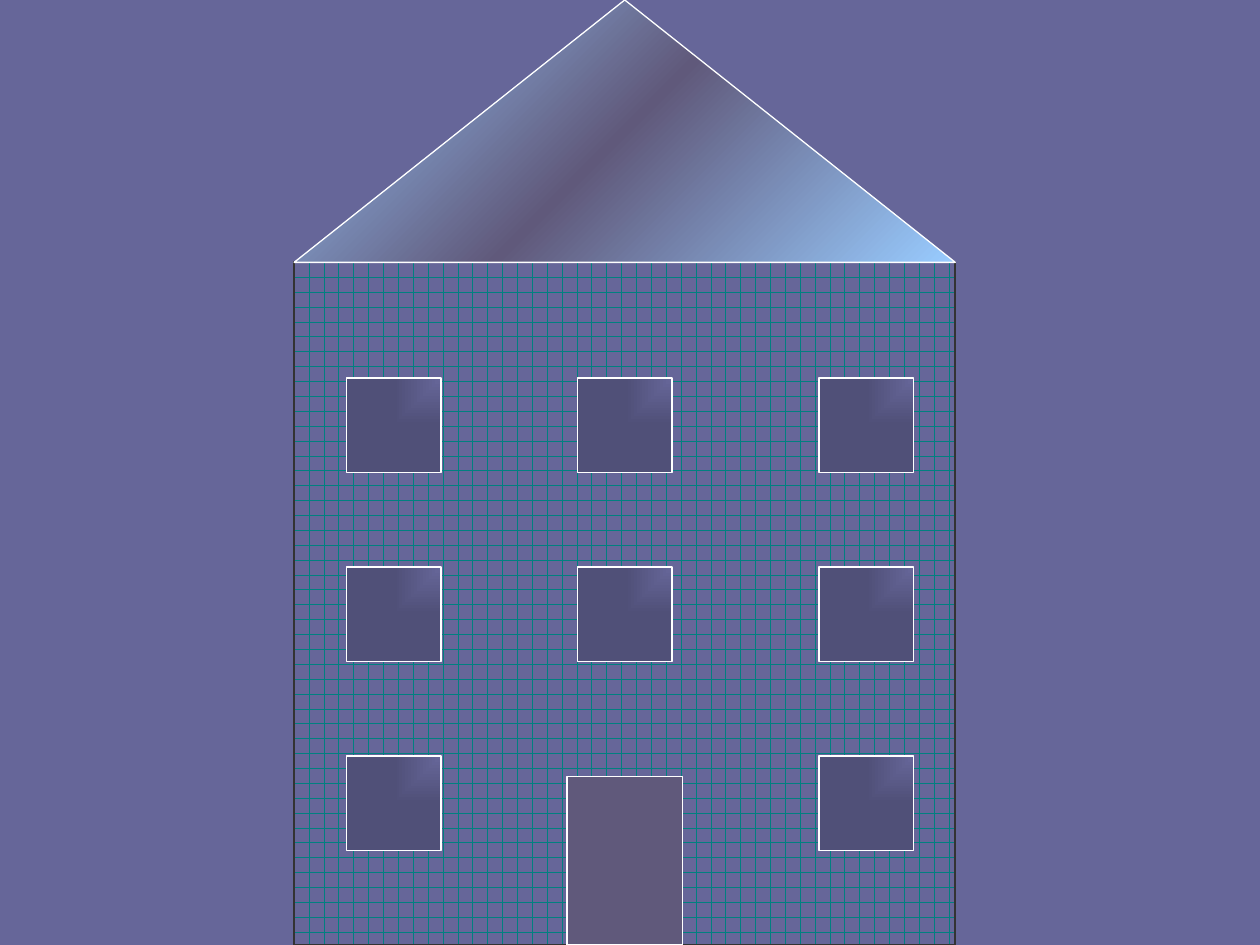
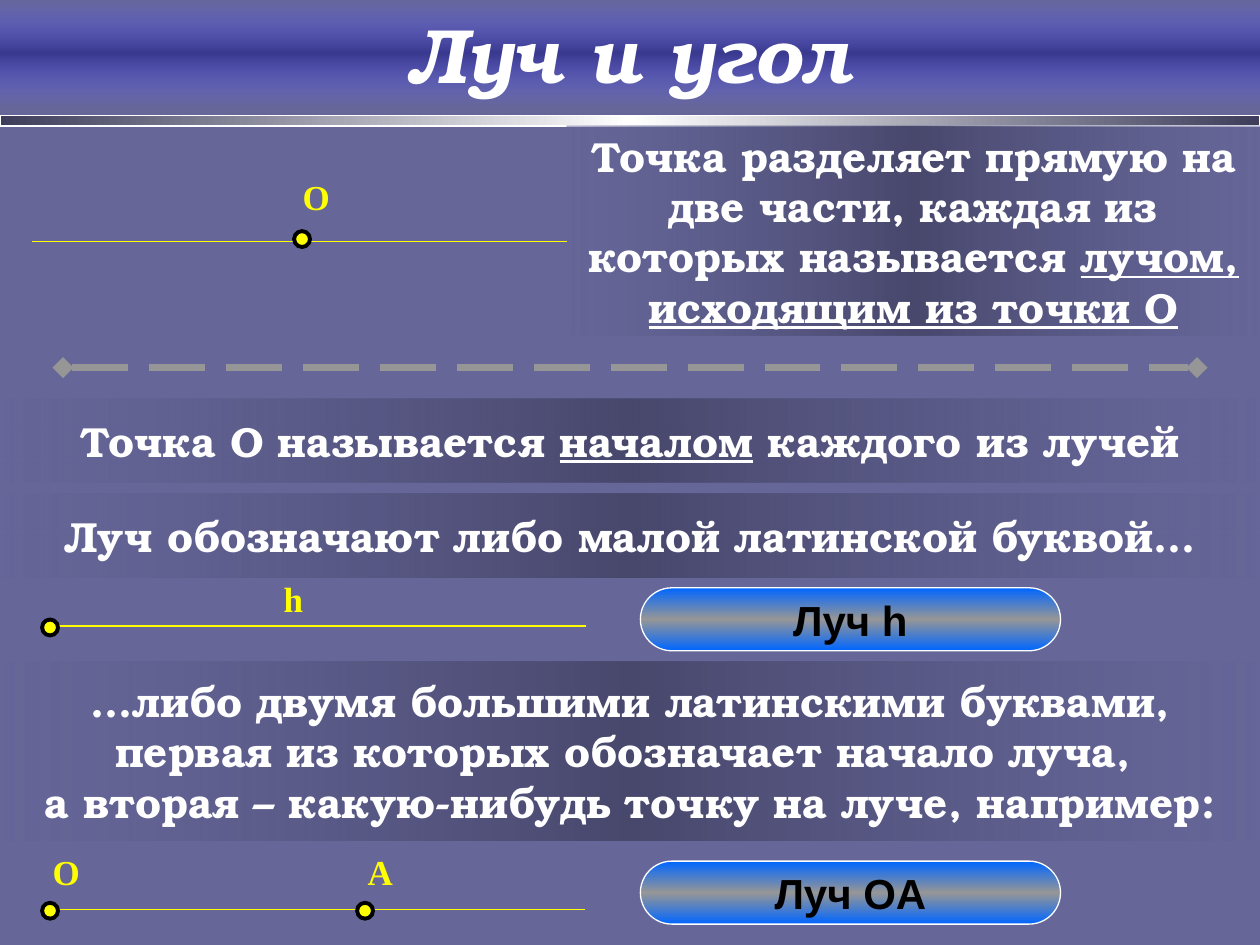
"""Build a house slide and a lesson slide about rays and angles."""
from dataclasses import dataclass
from typing import Any, Optional

from lxml.etree import SubElement as Sub
from pptx import Presentation
from pptx.dml.color import RGBColor as Rgb
from pptx.enum.dml import MSO_LINE_DASH_STYLE as Dash, MSO_PATTERN_TYPE as Pat
from pptx.enum.shapes import MSO_CONNECTOR_TYPE as Link, MSO_SHAPE as Kind
from pptx.enum.text import MSO_ANCHOR as Anchor, MSO_AUTO_SIZE as Auto, PP_ALIGN as Align
from pptx.oxml.ns import qn
from pptx.util import Cm, Pt


@dataclass(frozen=True)
class Stop:
    place: int
    color: str
    shade: Optional[float] = None
    alpha: Optional[int] = None


@dataclass(frozen=True)
class Blend:
    stops: tuple[Stop, ...]
    angle: Optional[int] = 0


@dataclass(frozen=True)
class Style:
    color: str
    font: dict[str, Any]


@dataclass(frozen=True)
class Theme:
    base: str = "666699"
    white: str = "FFFFFF"
    black: str = "000000"
    yellow: str = "FFFF00"
    grey: str = "969696"
    brick: str = "008080"
    edge: str = "333333"
    door: str = "60597B"
    thin: float = 0.75
    title: Style = Style("FFFFFF", dict(name="TeX Gyre Bonum", size=Pt(44), bold=True, italic=True))
    body: Style = Style("FFFFFF", dict(name="TeX Gyre Bonum", size=Pt(24), bold=True))
    button: Style = Style("000000", dict(name="Arial", size=Pt(24), bold=True))
    mark: Style = Style("FFFF00", dict(name="Times New Roman", size=Pt(20), bold=True))
    glass: Blend = Blend((Stop(0, "666699"), Stop(100, "666699", 57.65)), None)
    roof: Blend = Blend((Stop(0, "99CCFF"), Stop(50, "60597B"), Stop(100, "99CCFF")), 45)
    head: Blend = Blend((Stop(0, "6666FF", alpha=0), Stop(50, "6666FF", 26.67),
                         Stop(100, "6666FF", alpha=0)), 90)
    rule: Blend = Blend((Stop(0, "3E3E5C"), Stop(50, "FFFFFF"), Stop(100, "3E3E5C")))
    band: Blend = Blend((Stop(0, "666699", alpha=50), Stop(50, "666699", 46.27),
                         Stop(100, "666699", alpha=50)))
    pill: Blend = Blend((Stop(0, "0066FF"), Stop(50, "969696"), Stop(100, "0066FF")), 90)


@dataclass(frozen=True)
class Box:
    left: float
    top: float
    width: float
    height: float

    def cm(self) -> tuple[Cm, ...]:
        """Give the four lengths."""
        return Cm(self.left), Cm(self.top), Cm(self.width), Cm(self.height)


@dataclass(frozen=True)
class Mark:
    text: str
    left: float


@dataclass(frozen=True)
class Ray:
    left: float
    level: float
    dots: tuple[float, ...]
    dot_top: float
    marks: tuple[Mark, ...]
    mark_top: float


@dataclass(frozen=True)
class Label:
    box: Box
    text: str


THEME = Theme()
WIDE, TALL = 25.4, 19.05
WALL = Box(5.93, 5.29, 13.33, 13.76)
ROOF = Box(WALL.left, 0, WALL.width, WALL.top)
DOOR = Box(11.43, 15.66, 2.33, 3.39)
PANE, FLOOR, STEP = 1.91, 7.62, 3.81
COLUMNS = (6.98, 11.64, 16.51)
DOT, LENGTH = 0.32, 10.8

BANDS = (
    Label(Box(11.43, 2.54, 13.97, 4.23),
          "Точка разделяет прямую на две части, каждая из которых называется "
          "_лучом, исходящим из точки O_"),
    Label(Box(0, 8.04, WIDE, 1.69), "Точка O называется _началом_ каждого из лучей"),
    Label(Box(0, 9.95, WIDE, 1.69), "Луч обозначают либо малой латинской буквой…"),
    Label(Box(0, 13.34, WIDE, 3.6),
          "…либо двумя большими латинскими буквами, первая из которых обозначает начало луча, \n"
          "а вторая – какую-нибудь точку на луче, например:"),
)
BUTTONS = (Label(Box(12.91, 11.85, 8.47, 1.27), "Луч h"),
           Label(Box(12.91, 17.36, 8.47, 1.27), "Луч OA"))
RAYS = (
    Ray(0.64, 4.87, (5.93,), 4.66, (Mark("O", 6.1),), 3.53),
    Ray(1.02, 12.62, (0.85,), 12.49, (Mark("h", 5.72),), 11.64),
    Ray(0.99, 18.34, (0.85, 7.2), 18.2, (Mark("O", 1.06), Mark("А", 7.41)), 17.15),
)


def blend(shape: Any, mix: Blend) -> None:
    """Fill a shape with a gradient."""
    shape.fill.gradient()
    grad = shape.element.spPr.find(qn("a:gradFill"))
    for child in list(grad):
        grad.remove(child)
    stops = Sub(grad, qn("a:gsLst"))
    for stop in mix.stops:
        node = Sub(stops, qn("a:gs"), pos=str(stop.place * 1000))
        color = Sub(node, qn("a:srgbClr"), val=stop.color)
        for tag, value in (("a:shade", stop.shade), ("a:alpha", stop.alpha)):
            if value is not None:
                Sub(color, qn(tag), val=str(round(value * 1000)))
    if mix.angle is None:
        rect = Sub(grad, qn("a:path"), {"path": "rect"})
        Sub(rect, qn("a:fillToRect"), l="100000", b="100000")
    else:
        Sub(grad, qn("a:lin"), ang=str(mix.angle * 60000), scaled="0")


def stroke(line: Any, color: str, width: float) -> None:
    """Set the colour and width of a line."""
    line.color.rgb = Rgb.from_string(color)
    line.width = Pt(width)


def draw(shapes: Any, box: Box, fill: str | Blend, edge: Optional[str] = None,
         width: float = THEME.thin, kind: Kind = Kind.RECTANGLE) -> Any:
    """Draw one preset shape."""
    shape = shapes.add_shape(kind, *box.cm())
    shape.shadow.inherit = False
    if isinstance(fill, Blend):
        blend(shape, fill)
    else:
        shape.fill.solid()
        shape.fill.fore_color.rgb = Rgb.from_string(fill)
    if edge:
        stroke(shape.line, edge, width)
    else:
        shape.line.fill.background()
    return shape


def write(shape: Any, text: str, style: Style, wrap: bool = True,
          align: Optional[Align] = Align.CENTER, anchor: Anchor = Anchor.MIDDLE) -> Any:
    """Write text, underlining the parts between underscores."""
    frame = shape.text_frame
    frame.word_wrap, frame.vertical_anchor = wrap, anchor
    para = frame.paragraphs[0]
    para.alignment = align
    for part, words in enumerate(text.split("_")):
        for row, piece in enumerate(words.split("\n")):
            if row:
                para.add_line_break()
            if not piece:
                continue
            run = para.add_run()
            run.text = piece
            for key, value in style.font.items():
                setattr(run.font, key, value)
            run.font.color.rgb = Rgb.from_string(style.color)
            if part % 2:
                run.font.underline = True
    return frame


def link(shapes: Any, left: float, right: float, level: float, color: str, width: float) -> Any:
    """Draw a level line."""
    line = shapes.add_connector(Link.STRAIGHT, Cm(left), Cm(level), Cm(right), Cm(level))
    stroke(line.line, color, width)
    Sub(line.element.spPr, qn("a:effectLst"))
    return line


def draw_mark(shapes: Any, mark: Mark, top: float) -> None:
    """Write the letter of a point or ray."""
    box = shapes.add_textbox(*Box(mark.left, top, 1.06, 0.84).cm())
    frame = write(box, mark.text, THEME.mark, align=Align.LEFT, anchor=Anchor.TOP)
    for side in ("left", "top", "right", "bottom"):
        setattr(frame, f"margin_{side}", 0)
    frame.auto_size = Auto.SHAPE_TO_FIT_TEXT
    space = Sub(box.element.find(".//" + qn("a:pPr")), qn("a:spcBef"))
    Sub(space, qn("a:spcPct"), val="50000")


def draw_ray(slide: Any, ray: Ray) -> None:
    """Draw a grouped line with its points and letters."""
    shapes = slide.shapes.add_group_shape().shapes
    link(shapes, ray.left, ray.left + LENGTH, ray.level, THEME.yellow, THEME.thin)
    for left in ray.dots:
        draw(shapes, Box(left, ray.dot_top, DOT, DOT), THEME.yellow, THEME.black, 2.25, Kind.OVAL)
    for mark in ray.marks:
        draw_mark(shapes, mark, ray.mark_top)


def draw_break(slide: Any) -> None:
    """Draw the dashed line with diamond ends."""
    line = link(slide.shapes, 1.27, 24.13, 7.41, THEME.grey, 4)
    line.line.dash_style = Dash.LONG_DASH
    for tag in ("a:headEnd", "a:tailEnd"):
        Sub(line.element.spPr.find(qn("a:ln")), qn(tag), type="diamond")


def add_slide(deck: Any) -> Any:
    """Add a blank slide with the shared ground."""
    slide = deck.slides.add_slide(deck.slide_layouts[6])
    fill = slide.background.fill
    fill.solid()
    fill.fore_color.rgb = Rgb.from_string(THEME.base)
    return slide


def build_house(deck: Any) -> None:
    """Build the house."""
    shapes = add_slide(deck).shapes
    wall = draw(shapes, WALL, THEME.base, THEME.edge, 1.25)
    wall.fill.patterned()
    wall.fill.pattern = Pat.HORIZONTAL_BRICK
    wall.fill.fore_color.rgb = Rgb.from_string(THEME.brick)
    wall.fill.back_color.rgb = Rgb.from_string(THEME.base)
    for row in range(3):
        for left in COLUMNS if row < 2 else COLUMNS[::2]:
            draw(shapes, Box(left, FLOOR + row * STEP, PANE, PANE), THEME.glass, THEME.white)
    draw(shapes, DOOR, THEME.door, THEME.white)
    draw(shapes, ROOF, THEME.roof, THEME.white, kind=Kind.ISOSCELES_TRIANGLE)


def build_lesson(deck: Any) -> None:
    """Build the lesson on rays."""
    slide = add_slide(deck)
    shapes = slide.shapes
    write(draw(shapes, Box(0, 0, WIDE, 2.12), THEME.head), "Луч и угол", THEME.title)
    draw(shapes, Box(0, 2.33, WIDE, 0.21), THEME.rule, THEME.white)
    for band in BANDS:
        write(draw(shapes, band.box, THEME.band), band.text, THEME.body)
    draw_break(slide)
    for ray in RAYS:
        draw_ray(slide, ray)
    for button in BUTTONS:
        pill = draw(shapes, button.box, THEME.pill, THEME.white, kind=Kind.ROUNDED_RECTANGLE)
        pill.adjustments[0] = 0.5
        write(pill, button.text, THEME.button, wrap=False)


def main() -> None:
    """Build and save the deck."""
    deck = Presentation()
    deck.slide_width, deck.slide_height = Cm(WIDE), Cm(TALL)
    build_house(deck)
    build_lesson(deck)
    deck.save("out.pptx")


if __name__ == "__main__":
    main()
